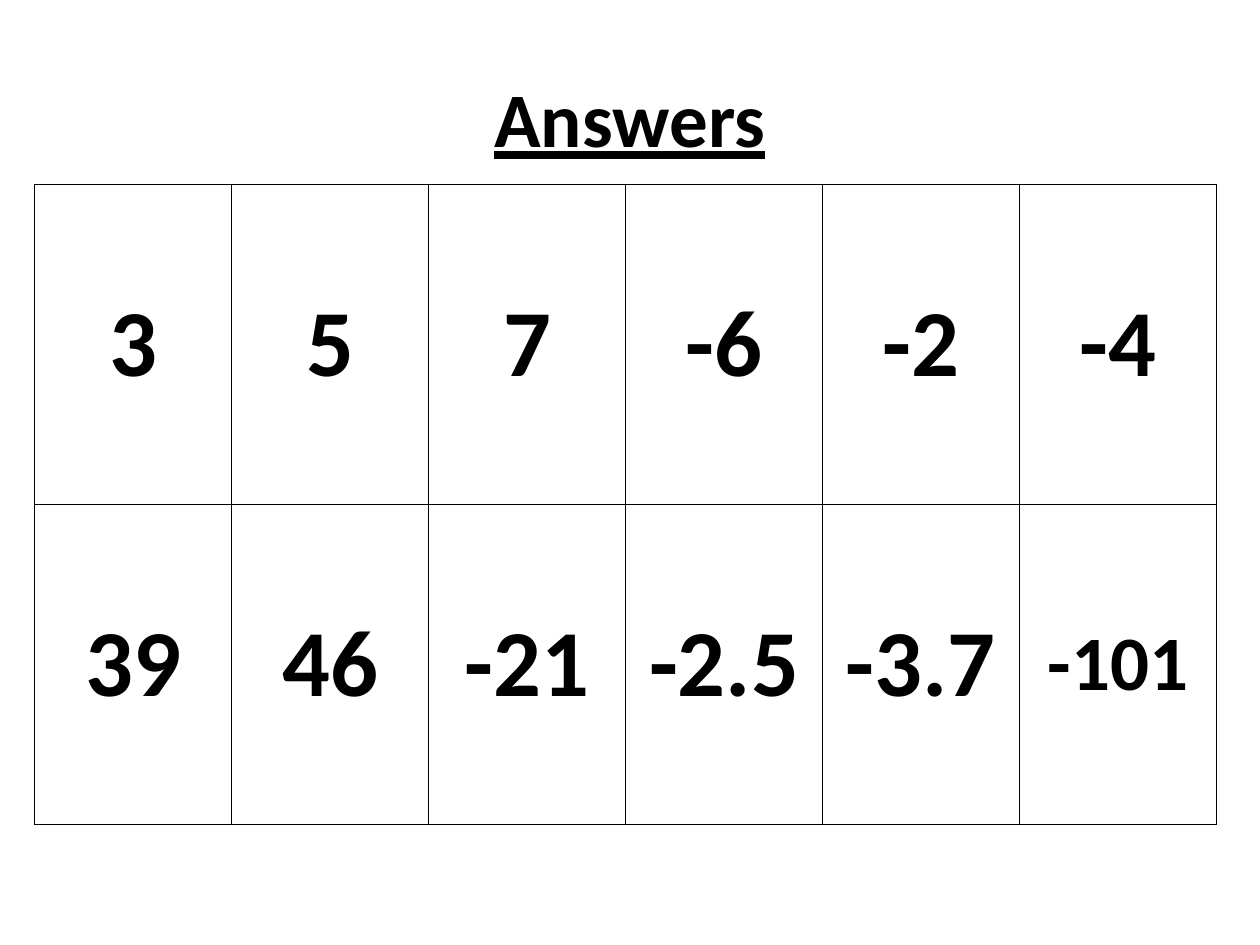
import pptx
import pptx.dml.color
import pptx.enum.text
import pptx.util
from lxml import etree
from pptx.util import Cm

FONT = "Calibri"
INK = "000000"
PAPER = "FFFFFF"
A = "http://schemas.openxmlformats.org/drawingml/2006/main"
ANSWERS = [
    ["3", "5", "7", "-6", "-2", "-4"],
    ["39", "46", "-21", "-2.5", "-3.7", "-101"],
]


def color(value):
    return pptx.dml.color.RGBColor.from_string(value)


def write(tf, text, size=54, bold=True, underline=False, fill=INK):
    """Put one centred line of formatted text in a text frame."""
    tf.word_wrap = True
    p = tf.paragraphs[0]
    p.alignment = pptx.enum.text.PP_ALIGN.CENTER
    r = p.add_run()
    r.text = text
    r.font.name = FONT
    r.font.size = pptx.util.Pt(size)
    r.font.bold = bold
    r.font.underline = underline
    r.font.color.rgb = color(fill)


def add_title(s, text):
    sp = s.shapes.add_textbox(Cm(1.27), Cm(0.76), Cm(22.86), Cm(3.18))
    tf = sp.text_frame
    tf.vertical_anchor = pptx.enum.text.MSO_ANCHOR.MIDDLE
    write(tf, text, size=44, underline=True)


def set_borders(cell, value=INK, width=1):
    tcPr = cell._tc.get_or_add_tcPr()
    for side in ("lnL", "lnR", "lnT", "lnB"):
        ln = etree.SubElement(tcPr, f"{{{A}}}{side}", w=str(pptx.util.Pt(width)))
        fill = etree.SubElement(ln, f"{{{A}}}solidFill")
        etree.SubElement(fill, f"{{{A}}}srgbClr", val=value)


def add_answer_table(s, rows):
    col_width, row_height = Cm(3.97), Cm(6.45)
    n_rows, n_cols = len(rows), len(rows[0])
    table = s.shapes.add_table(n_rows, n_cols, Cm(0.7), Cm(3.72),
                               col_width * n_cols, row_height * n_rows).table
    table.first_row = table.horz_banding = False
    for col in table.columns:
        col.width = col_width
    for i, row in enumerate(rows):
        table.rows[i].height = row_height
        for j, text in enumerate(row):
            cell = table.cell(i, j)
            cell.vertical_anchor = pptx.enum.text.MSO_ANCHOR.MIDDLE
            set_borders(cell)
            cell.fill.solid()
            cell.fill.fore_color.rgb = color(PAPER)
            # The widest number needs a smaller size to stay on one line
            write(cell.text_frame, text, size=44 if text == "-101" else 54)


def main():
    prs = pptx.Presentation()
    prs.slide_width, prs.slide_height = Cm(25.4), Cm(19.05)
    s = prs.slides.add_slide(prs.slide_layouts[6])

    # Heading
    add_title(s, "Answers")

    # Grid of answers
    add_answer_table(s, ANSWERS)

    prs.save("out.pptx")


if __name__ == "__main__":
    main()
